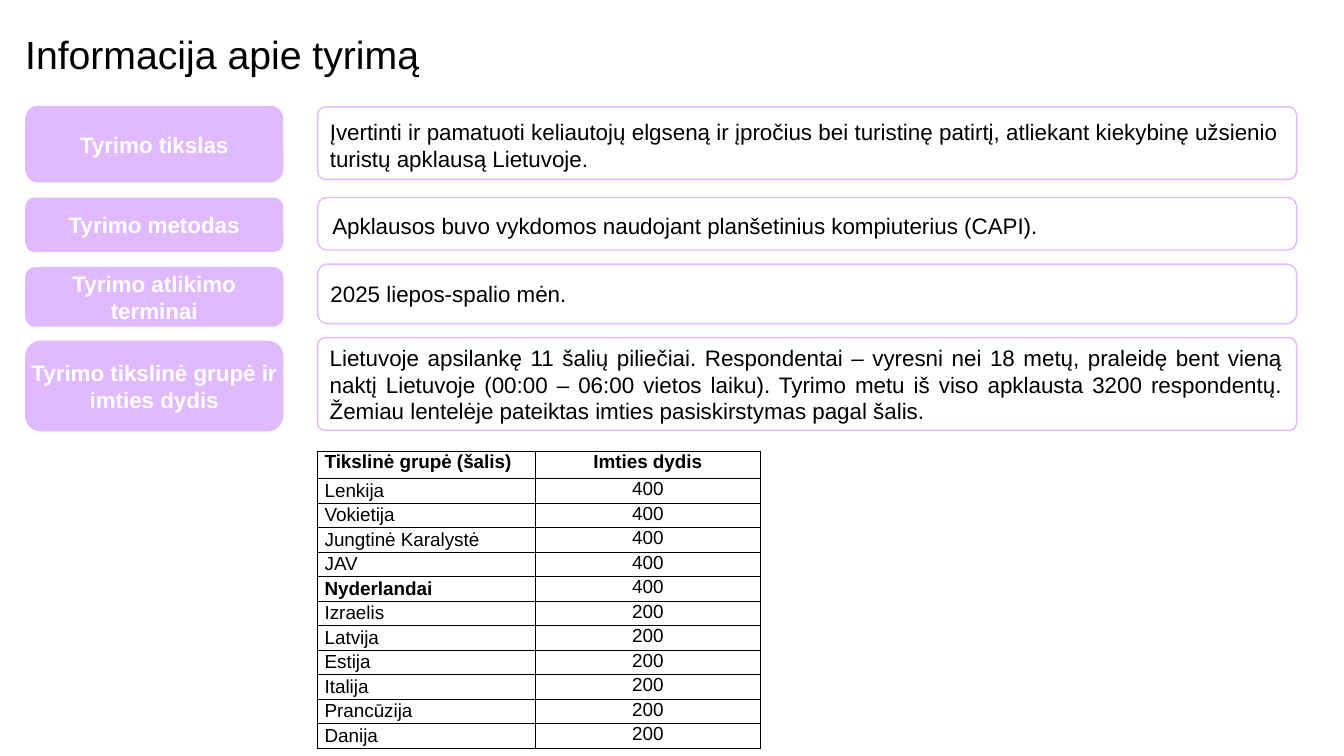
from pptx import Presentation
from pptx.dml.color import RGBColor as RGB
from pptx.enum.shapes import MSO_SHAPE as SHAPE
from pptx.enum.text import MSO_ANCHOR as ANCHOR, PP_ALIGN as ALIGN
from pptx.oxml import parse_xml
from pptx.oxml.ns import nsdecls
from pptx.util import Pt

BLACK = RGB(0, 0, 0)
WHITE = RGB(255, 255, 255)
LILAC = RGB(0xE1, 0xB9, 0xFF)

SCALE = 9144  # EMU in one px, 100 px to the inch
LEFT, LABEL_W = 25, 256
MAIN, MAIN_W = 315, 971

# label, its top and height; text, its top, height, corner and insets
TOPICS = [
    ("Tyrimo tikslas", 105, 76,
     "Įvertinti ir pamatuoti keliautojų elgseną ir įpročius bei turistinę "
     "patirtį, atliekant kiekybinę užsienio turistų apklausą Lietuvoje.",
     106, 72, 0.11, (10, 12, 16, 8)),
    ("Tyrimo metodas", 196, 54,
     "Apklausos buvo vykdomos naudojant planšetinius kompiuterius (CAPI).",
     196, 52, 0.17, (12, 12, 16, 8)),
    ("Tyrimo atlikimo terminai", 265, 59,
     "2025 liepos-spalio mėn.",
     262, 59, 0.17, (10, 0, 0, 0)),
    ("Tyrimo tikslinė grupė ir imties dydis", 338, 90,
     "Lietuvoje apsilankę 11 šalių piliečiai. Respondentai – vyresni nei 18 "
     "metų, praleidę bent vieną naktį Lietuvoje (00:00 – 06:00 vietos laiku). "
     "Tyrimo metu iš viso apklausta 3200 respondentų. Žemiau lentelėje "
     "pateiktas imties pasiskirstymas pagal šalis.",
     335, 92, 0.08, (10, 0, 12, 0)),
]

HEAD = ("Tikslinė grupė (šalis)", "Imties dydis")
SAMPLE = [
    ("Lenkija", 400), ("Vokietija", 400), ("Jungtinė Karalystė", 400),
    ("JAV", 400), ("Nyderlandai", 400), ("Izraelis", 200), ("Latvija", 200),
    ("Estija", 200), ("Italija", 200), ("Prancūzija", 200), ("Danija", 200),
]
STRONG = "Nyderlandai"


def px(*nums):
    return [num * SCALE for num in nums]


def apply(item, **values):
    for name, value in values.items():
        setattr(item, name, value)


class Page:
    """Holds the text style and the slide being filled."""

    font = "Arial"

    def __init__(self, deck):
        self.slide = deck.slides.add_slide(deck.slide_layouts[6])
        self.shapes = self.slide.shapes

    def label(self, frame, text, size, color=BLACK, bold=False,
              align=ALIGN.LEFT, lead=None):
        """Fill a text frame with one styled paragraph."""
        para = frame.paragraphs[0]
        apply(para, alignment=align, line_spacing=lead)
        run = para.add_run()
        run.text = text
        apply(run.font, name=self.font, size=Pt(size), bold=bold)
        run.font.color.rgb = color

    def pad(self, item, insets):
        """Set the margins of a text frame or a cell: left, top, right, bottom."""
        sides = ("left", "top", "right", "bottom")
        apply(item, **{f"margin_{side}": val
                       for side, val in zip(sides, px(*insets))})

    def title(self, text, *place):
        frame = self.shapes.add_textbox(*px(*place)).text_frame
        frame.word_wrap = True
        self.pad(frame, (0, 0, 0, 0))
        self.label(frame, text, 28, lead=0.9)

    def box(self, text, place, fill, corner, insets=(0, 0, 0, 0), line=None,
            **style):
        shape = self.shapes.add_shape(SHAPE.ROUNDED_RECTANGLE, *px(*place))
        shape.shadow.inherit = False
        shape.adjustments[0] = corner
        shape.fill.solid()
        shape.fill.fore_color.rgb = fill
        if line is None:
            shape.line.fill.background()
        else:
            shape.line.color.rgb = line
            shape.line.width = Pt(1)
        frame = shape.text_frame
        apply(frame, word_wrap=True, vertical_anchor=ANCHOR.MIDDLE)
        self.pad(frame, insets)
        self.label(frame, text, 16, **style)

    def border(self, cell):
        """Draw thin black borders round a cell."""
        props = cell._tc.get_or_add_tcPr()
        for side in "LRTB":
            props.append(parse_xml(
                f'<a:ln{side} {nsdecls("a")} w="{Pt(1)}"><a:solidFill>'
                f'<a:srgbClr val="{BLACK}"/></a:solidFill></a:ln{side}>'))

    def table(self, rows, left, top, widths, heights):
        place = px(left, top, sum(widths), sum(heights))
        grid = self.shapes.add_table(len(rows), len(widths), *place).table
        apply(grid, first_row=False, horz_banding=False)
        for col, width in zip(grid.columns, px(*widths)):
            col.width = width
        for row, height in zip(grid.rows, px(*heights)):
            row.height = height
        for i, row in enumerate(rows):
            for j, value in enumerate(row):
                cell = grid.cell(i, j)
                self.border(cell)
                cell.fill.background()
                self.pad(cell, (7, 0, 7, 0))
                self.label(cell.text_frame, str(value), 13.5,
                           bold=i == 0 or value == STRONG,
                           align=ALIGN.CENTER if j else ALIGN.LEFT,
                           lead=1.08 if i and not j else None)


def main():
    deck = Presentation()
    deck.slide_width, deck.slide_height = px(1333, 750)
    page = Page(deck)
    page.title("Informacija apie tyrimą", LEFT, 35, 626, 40)
    for label, top, high, text, y, tall, corner, insets in TOPICS:
        page.box(label, (LEFT, top, LABEL_W, high), LILAC, 0.17,
                 color=WHITE, bold=True, align=ALIGN.CENTER)
        page.box(text, (MAIN, y, MAIN_W, tall), WHITE, corner, insets,
                 line=LILAC, align=ALIGN.JUSTIFY)
    page.table([HEAD, *SAMPLE], MAIN, 448, (216, 223),
               [27] + [22] * len(SAMPLE))
    deck.save("out.pptx")


if __name__ == "__main__":
    main()
